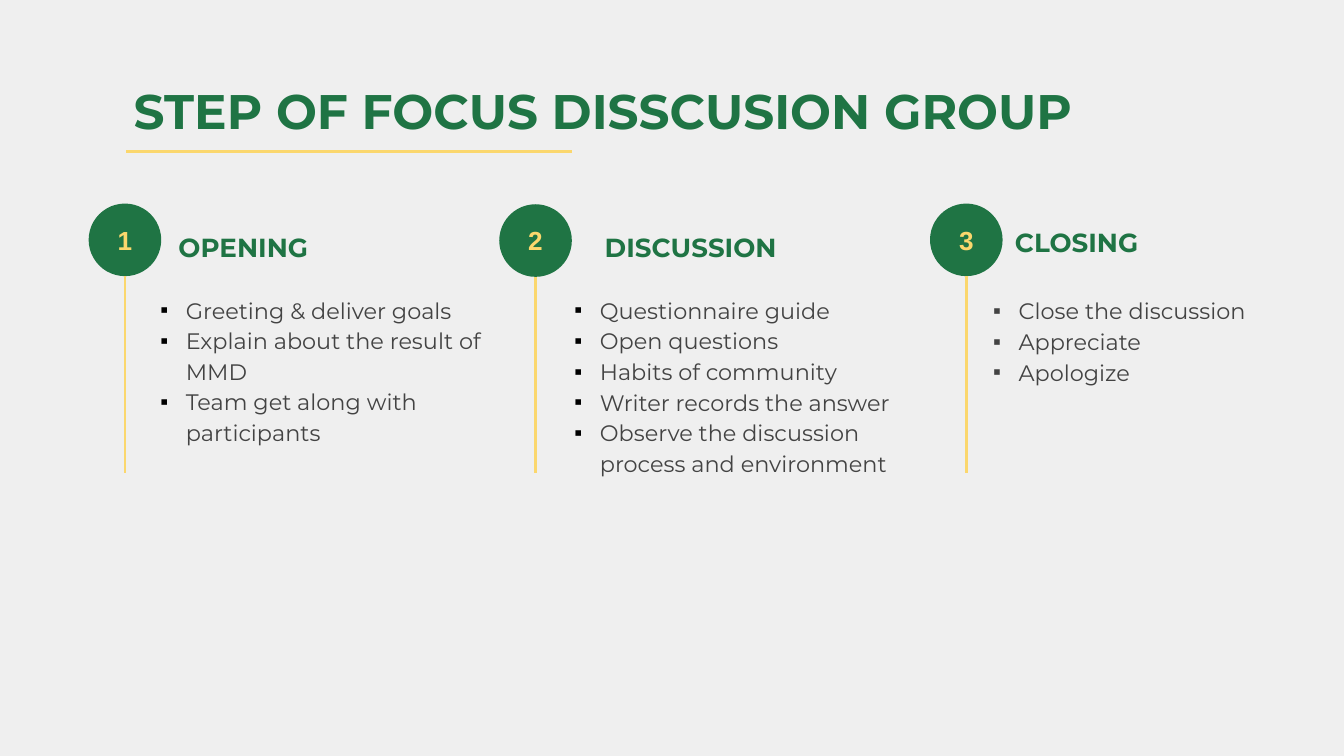
"""Build a slide with the three steps of a focus group discussion."""
from dataclasses import dataclass

from lxml import etree
from pptx import Presentation
from pptx.dml.color import RGBColor
from pptx.enum import shapes, text
from pptx.oxml import ns
from pptx.util import Emu, Pt

PX = 4572
LEFT, CENTER, RIGHT = text.PP_ALIGN.LEFT, text.PP_ALIGN.CENTER, text.PP_ALIGN.RIGHT


@dataclass(frozen=True)
class Theme:
    """Colours, fonts and type sizes of the slide."""
    back: str = "EFEFEF"
    green: str = "1F7444"
    yellow: str = "FBD76D"
    grey: str = "434343"
    black: str = "000000"
    font: str = "Montserrat"
    number_font: str = "Arial"
    title: int = 26
    heading: int = 14
    body: int = 12
    line: float = 1.5


T = Theme()
HEADING = dict(name=T.font, size=Pt(T.heading), bold=True)
TITLE = {**HEADING, "size": Pt(T.title)}
NUMBER = {**HEADING, "name": T.number_font}
BODY = dict(name=T.font, size=Pt(T.body), bold=False)

STEPS = [
    dict(box=(132, 303, 108, 401), heading="OPENING",
         heading_box=(114, 21, 386, 88), align=LEFT, pad=20,
         body_box=(87, 113, 566, 520), bullet=T.black, spacing=1.14,
         items=["Greeting & deliver goals", "Explain about the result of MMD",
                "Team get along with participants"]),
    dict(box=(743, 304, 108, 400), heading="DISCUSSION",
         heading_box=(131, 20, 312, 94), align=RIGHT, pad=30,
         body_box=(92, 112, 528, 576), bullet=T.black, spacing=1.14,
         items=["Questionnaire guide", "Open questions", "Habits of community",
                "Writer records the answer",
                "Observe the discussion process and environment"]),
    dict(box=(1384, 303, 108, 401), heading="CLOSING",
         heading_box=(70, 14, 282, 108), align=RIGHT, pad=42,
         body_box=(74, 113, 462, 182), bullet=T.grey, spacing=1.15,
         items=["Close the discussion", "Appreciate", "Apologize"]),
]


def emu(*lengths):
    """Turn px into EMU."""
    return [Emu(n * PX) for n in lengths]


def apply(obj, values):
    """Set each named attribute of an object."""
    for name, value in values.items():
        setattr(obj, name, value)


def write(sp, lines, font, color, align=LEFT, pad=20, anchor=text.MSO_ANCHOR.TOP):
    """Fill a shape with one paragraph per line and return the paragraphs."""
    tf = sp.text_frame
    left, right, edge = emu(10 if align == RIGHT else 20, pad, 20)
    apply(tf, dict(word_wrap=True, auto_size=text.MSO_AUTO_SIZE.NONE,
                   vertical_anchor=anchor, margin_left=left, margin_right=right,
                   margin_top=edge, margin_bottom=edge))
    tf.text = "\n".join(lines)
    for p in tf.paragraphs:
        p.alignment = align
        for r in p.runs:
            apply(r.font, font)
            r.font.color.rgb = RGBColor.from_string(color)
    return tf.paragraphs


def add_bullet(p, color, indent=38):
    """Give a paragraph a square bullet with a hanging indent."""
    pPr = p._p.get_or_add_pPr()
    pPr.set("marL", str(indent * PX))
    pPr.set("indent", str(-indent * PX))
    bu_color = etree.SubElement(pPr, ns.qn("a:buClr"))
    etree.SubElement(bu_color, ns.qn("a:srgbClr"), val=color)
    etree.SubElement(pPr, ns.qn("a:buFont"), typeface="Arial")
    etree.SubElement(pPr, ns.qn("a:buChar"), char="▪")


def add_line(slide, x1, y1, x2, y2):
    """Draw a plain yellow line."""
    line = slide.shapes.add_connector(shapes.MSO_CONNECTOR.STRAIGHT, *emu(x1, y1, x2, y2))
    line.line.color.rgb = RGBColor.from_string(T.yellow)
    line.line.width = Pt(T.line)
    etree.SubElement(line._element.spPr, ns.qn("a:effectLst"))


def add_title(slide, box, title):
    """Place the slide title with its underline."""
    x, y, w, h = box
    sp = slide.shapes.title
    apply(sp, dict(zip(("left", "top", "width", "height"), emu(*box))))
    write(sp, [title], TITLE, T.green)
    add_line(slide, x + 9, y + h, x + 672, y + h)


def add_step(slide, number, box, heading, heading_box, align, pad,
             body_box, bullet, spacing, items):
    """Place a numbered circle with its stem, heading and bullet list."""
    x, y, size, h = box

    def add_box(inner):
        """Add a text box placed from the corner of the step."""
        dx, dy, width, height = inner
        return slide.shapes.add_textbox(*emu(x + dx, y + dy, width, height))

    write(add_box(heading_box), [heading], HEADING, T.green, align, pad)
    for p in write(add_box(body_box), items, BODY, T.grey):
        p.line_spacing = spacing
        add_bullet(p, bullet)

    sp = slide.shapes.add_shape(shapes.MSO_SHAPE.OVAL, *emu(x, y, size, size))
    sp.shadow.inherit = False
    sp.fill.solid()
    sp.fill.fore_color.rgb = RGBColor.from_string(T.green)
    sp.line.fill.background()
    write(sp, [str(number)], NUMBER, T.yellow, CENTER, anchor=text.MSO_ANCHOR.MIDDLE)
    middle = x + size // 2
    add_line(slide, middle, y + size, middle, y + h)


def main():
    """Build and save the presentation."""
    prs = Presentation()
    prs.slide_width, prs.slide_height = emu(2000, 1125)
    slide = prs.slides.add_slide(prs.slide_layouts[5])
    slide.background.fill.solid()
    slide.background.fill.fore_color.rgb = RGBColor.from_string(T.back)
    add_title(slide, (179, 100, 1642, 126), "STEP OF FOCUS DISSCUSION GROUP")
    for number, step in enumerate(STEPS, 1):
        add_step(slide, number, **step)
    prs.save("out.pptx")


if __name__ == "__main__":
    main()
